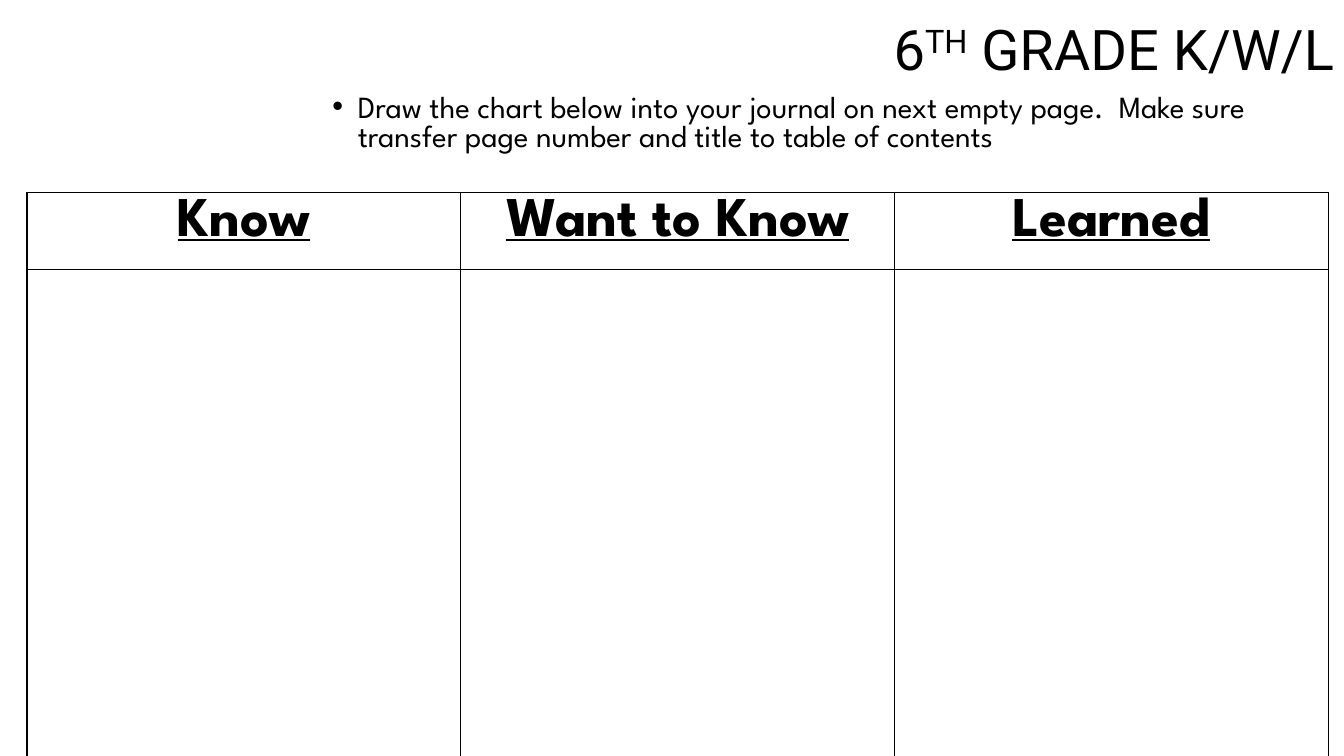
from lxml import etree
from pptx import Presentation
from pptx.dml.color import RGBColor
from pptx.enum.text import MSO_ANCHOR, PP_ALIGN
from pptx.oxml.ns import qn
from pptx.util import Cm, Pt

BLACK = RGBColor(0, 0, 0)
RIGHT, CENTER = PP_ALIGN.RIGHT, PP_ALIGN.CENTER
MIDDLE = MSO_ANCHOR.MIDDLE
TITLE_ONLY = 5
HEADINGS = ["Know", "Want to Know", "Learned"]
ROW_HEIGHTS = [Cm(1.76), Cm(12.44)]
COLUMN_WIDTH = Cm(10.93)


def style_font(paragraph, name, size):
    paragraph.font.name = name
    paragraph.font.size = Pt(size)
    paragraph.font.color.rgb = BLACK


def add_borders(cell):
    properties = cell._tc.get_or_add_tcPr()
    for position, side in enumerate(["lnL", "lnR", "lnT", "lnB"]):
        line = etree.Element(qn(f"a:{side}"), w=str(Pt(1)))
        fill = etree.SubElement(line, qn("a:solidFill"))
        etree.SubElement(fill, qn("a:srgbClr"), val=str(BLACK))
        properties.insert(position, line)


deck = Presentation()
deck.slide_width = Cm(33.87)
deck.slide_height = Cm(19.05)
page = deck.slides.add_slide(deck.slide_layouts[TITLE_ONLY])

title = page.shapes.title
title.left, title.top, title.width, title.height = Cm(9.95), Cm(-0.48), Cm(23.92), Cm(3.58)
title.text_frame.vertical_anchor = MIDDLE
para = title.text_frame.paragraphs[0]
para.alignment = RIGHT
para.line_spacing = 0.9
style_font(para, "Roboto", 40)
for text, baseline in [("6", 0), ("TH", 30000), (" GRADE K/W/L", 0)]:
    span = para.add_run()
    span.text = text
    if baseline:
        span._r.get_or_add_rPr().set("baseline", str(baseline))

box = page.shapes.add_textbox(Cm(8.13), Cm(2.26), Cm(25.73), Cm(1.88))
box.text_frame.word_wrap = True
para = box.text_frame.paragraphs[0]
para.text = (
    "Draw the chart below into your journal on next empty page.  Make sure "
    "transfer page number and title to table of contents"
)
para.line_spacing = 0.8
indents = para._p.get_or_add_pPr()
indents.set("marL", str(Cm(0.64)))
indents.set("indent", str(Cm(-0.64)))
etree.SubElement(indents, qn("a:buFont"), typeface="Arial")
etree.SubElement(indents, qn("a:buChar"), char="•")
style_font(para, "League Spartan", 22)

frame = page.shapes.add_table(
    len(ROW_HEIGHTS), len(HEADINGS), Cm(0.68), Cm(4.85),
    COLUMN_WIDTH * len(HEADINGS), sum(ROW_HEIGHTS),
)
table = frame.table
table.first_row = False
table.horz_banding = False
for column in table.columns:
    column.width = COLUMN_WIDTH
for row, height in zip(table.rows, ROW_HEIGHTS):
    row.height = height
for cell in table.iter_cells():
    cell.fill.background()
    add_borders(cell)
for column, heading in enumerate(HEADINGS):
    para = table.cell(0, column).text_frame.paragraphs[0]
    para.text = heading
    para.alignment = CENTER
    style_font(para, "League Spartan", 40)
    para.font.bold = True
    para.font.underline = True

deck.save("out.pptx")
